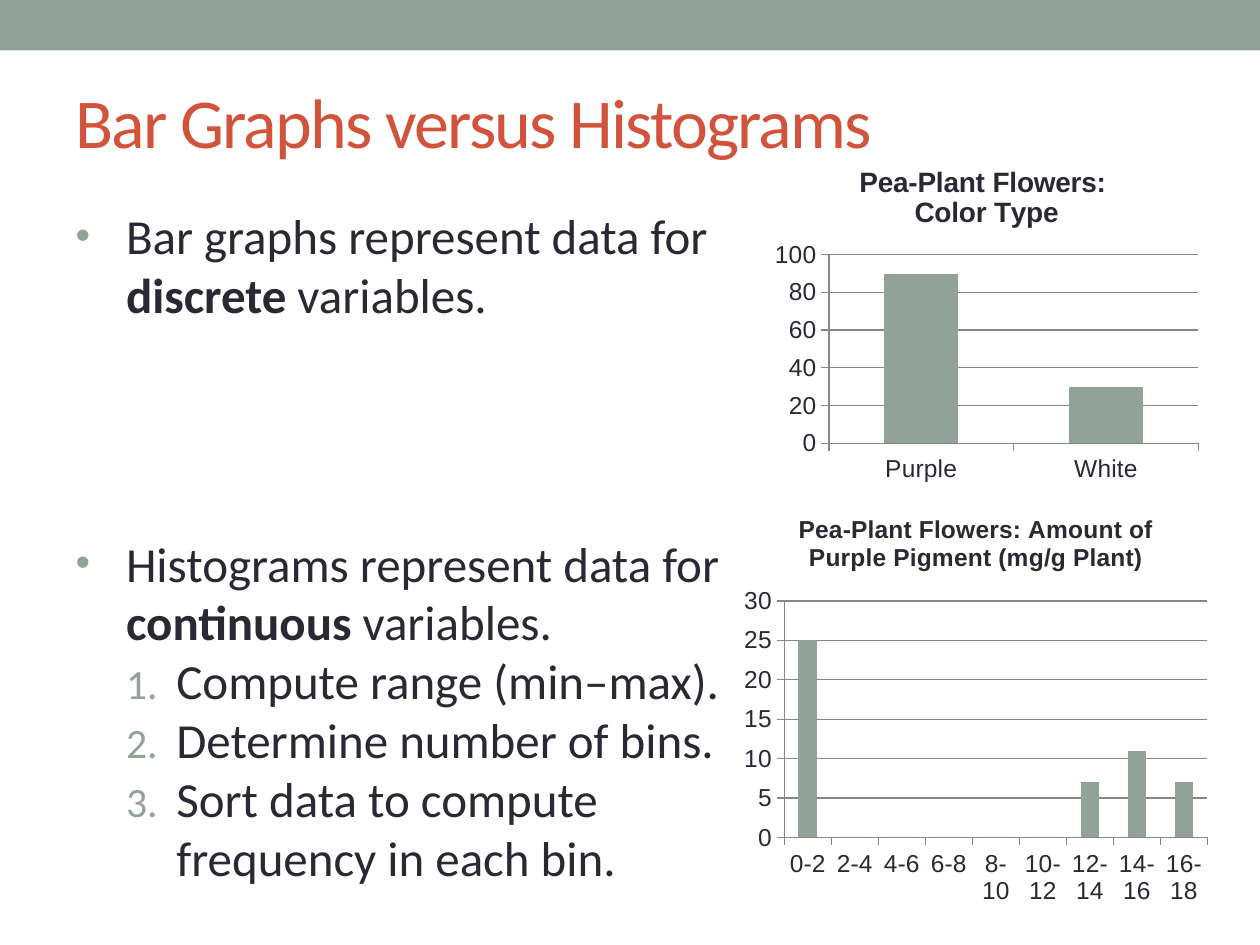
from lxml import etree
from pptx import Presentation
from pptx.chart.data import CategoryChartData
from pptx.dml.color import RGBColor
from pptx.enum.chart import XL_CHART_TYPE, XL_TICK_MARK
from pptx.enum.shapes import MSO_SHAPE
from pptx.enum.text import MSO_ANCHOR, MSO_AUTO_SIZE, PP_ALIGN
from pptx.oxml.ns import qn
from pptx.util import Inches, Pt

COLUMNS = XL_CHART_TYPE.COLUMN_CLUSTERED
RECTANGLE = MSO_SHAPE.RECTANGLE
TICK_OUTSIDE = XL_TICK_MARK.OUTSIDE
NO_AUTOFIT = MSO_AUTO_SIZE.NONE
MIDDLE, TOP = MSO_ANCHOR.MIDDLE, MSO_ANCHOR.TOP
LEFT = PP_ALIGN.LEFT

COLORS = {"sage": "93A299", "title": "D2533C", "text": "292934", "grid": "868686"}
TEXT_FONT, CHART_FONT = "Calibri", "Arial"
INDENT = 0.4

# Each paragraph: level, space before in points, (plain, bold, plain) text
POINTS = [
    (0, 0, ("Bar graphs represent data for \v", "discrete", " variables.")),
    (0, 120, ("Histograms represent data for \v", "continuous", " variables.")),
    (1, 0, ("Compute range (min–max).",)),
    (1, 0, ("Determine number of bins.",)),
    (1, 0, ("Sort data to compute \vfrequency in each bin.",)),
]
BINS = [f"{start}-{start + 2}" for start in range(0, 18, 2)]


def color(name):
    return RGBColor.from_string(COLORS[name])


def set_font(font, name, size, color_name, bold=False):
    font.name = name
    font.size = Pt(size)
    font.bold = bold
    font.color.rgb = color(color_name)


def place(shape, box):
    shape.left, shape.top, shape.width, shape.height = map(Inches, box)


def add_band(page, box):
    band = page.shapes.add_shape(RECTANGLE, *map(Inches, box))
    band.shadow.inherit = False
    band.fill.solid()
    band.fill.fore_color.rgb = color("sage")
    band.line.fill.background()
    page.shapes.title.element.addprevious(band.element)


def fill_title(title, box, text):
    place(title, box)
    frame = title.text_frame
    frame.text = text
    frame.auto_size = NO_AUTOFIT
    frame.vertical_anchor = MIDDLE
    para = frame.paragraphs[0]
    para.alignment = LEFT
    for span in para.runs:
        set_font(span.font, TEXT_FONT, 40, "title")
        span.font._element.set("spc", "-100")


def add_marker(para, level):
    """Give the paragraph a bullet on level 0 and a number on level 1."""
    props = para._p.get_or_add_pPr()
    props.set("marL", str(Inches(INDENT * (level + 1))))
    props.set("indent", str(Inches(-INDENT)))
    marker_color = etree.SubElement(props, qn("a:buClr"))
    etree.SubElement(marker_color, qn("a:srgbClr"), val=COLORS["sage"])
    etree.SubElement(props, qn("a:buSzPct"), val="85000")
    if level:
        etree.SubElement(props, qn("a:buFont"), typeface=TEXT_FONT)
        etree.SubElement(props, qn("a:buAutoNum"), type="arabicPeriod")
    else:
        etree.SubElement(props, qn("a:buFont"), typeface=CHART_FONT)
        etree.SubElement(props, qn("a:buChar"), char="•")


def add_spans(para, text, bold):
    for index, line in enumerate(text.split("\v")):
        if index:
            para.add_line_break()
        if line:
            span = para.add_run()
            span.text = line
            set_font(span.font, TEXT_FONT, 28, "text", bold)


def fill_body(body, box, points):
    place(body, box)
    frame = body.text_frame
    frame.auto_size = NO_AUTOFIT
    frame.vertical_anchor = TOP
    for index, (level, space, pieces) in enumerate(points):
        para = frame.add_paragraph() if index else frame.paragraphs[0]
        para.level = level
        para.space_before = Pt(space)
        add_marker(para, level)
        for position, piece in enumerate(pieces):
            add_spans(para, piece, bold=position == 1)


def style_axis(axis):
    axis.major_tick_mark = TICK_OUTSIDE
    axis.format.line.color.rgb = color("grid")
    set_font(axis.tick_labels.font, CHART_FONT, 14, "text")


def add_column_chart(page, box, title, title_size, categories, values, top, step):
    data = CategoryChartData()
    data.categories = categories
    data.add_series("Series 1", values)
    chart = page.shapes.add_chart(COLUMNS, *map(Inches, box), data).chart
    set_font(chart.font, CHART_FONT, 18, "text")
    chart.has_legend = False

    chart.has_title = True
    chart.chart_title.include_in_layout = False
    para = chart.chart_title.text_frame.paragraphs[0]
    para.text = title
    for span in para.runs:
        set_font(span.font, CHART_FONT, title_size, "text", bold=True)

    style_axis(chart.category_axis)
    scale = chart.value_axis
    style_axis(scale)
    scale.minimum_scale, scale.maximum_scale, scale.major_unit = 0, top, step
    scale.has_major_gridlines = True
    scale.major_gridlines.format.line.color.rgb = color("grid")

    plot = chart.plots[0]
    plot.gap_width = 150
    plot.vary_by_categories = False
    columns = plot.series[0].format.fill
    columns.solid()
    columns.fore_color.rgb = color("sage")


def main():
    deck = Presentation()
    deck.slide_width, deck.slide_height = Inches(10), Inches(7.5)
    page = deck.slides.add_slide(deck.slide_layouts[1])
    add_band(page, (0, 0, 10, 0.4))
    fill_title(page.shapes.title, (0.5, 0.42, 9, 1.08), "Bar Graphs versus Histograms")
    fill_body(page.placeholders[1], (0.5, 1.58, 9, 5.5), POINTS)
    add_column_chart(page, (5.83, 3.92, 3.83, 3.33),
                     "Pea-Plant Flowers: Amount of Purple Pigment (mg/g Plant)", 14,
                     BINS, (25, 0, 0, 0, 0, 0, 7, 11, 7), top=30, step=5)
    add_column_chart(page, (6.08, 1.17, 3.5, 2.72),
                     "Pea-Plant Flowers: \vColor Type", 16,
                     ("Purple", "White"), (90, 30), top=100, step=20)
    deck.save("out.pptx")


if __name__ == "__main__":
    main()
